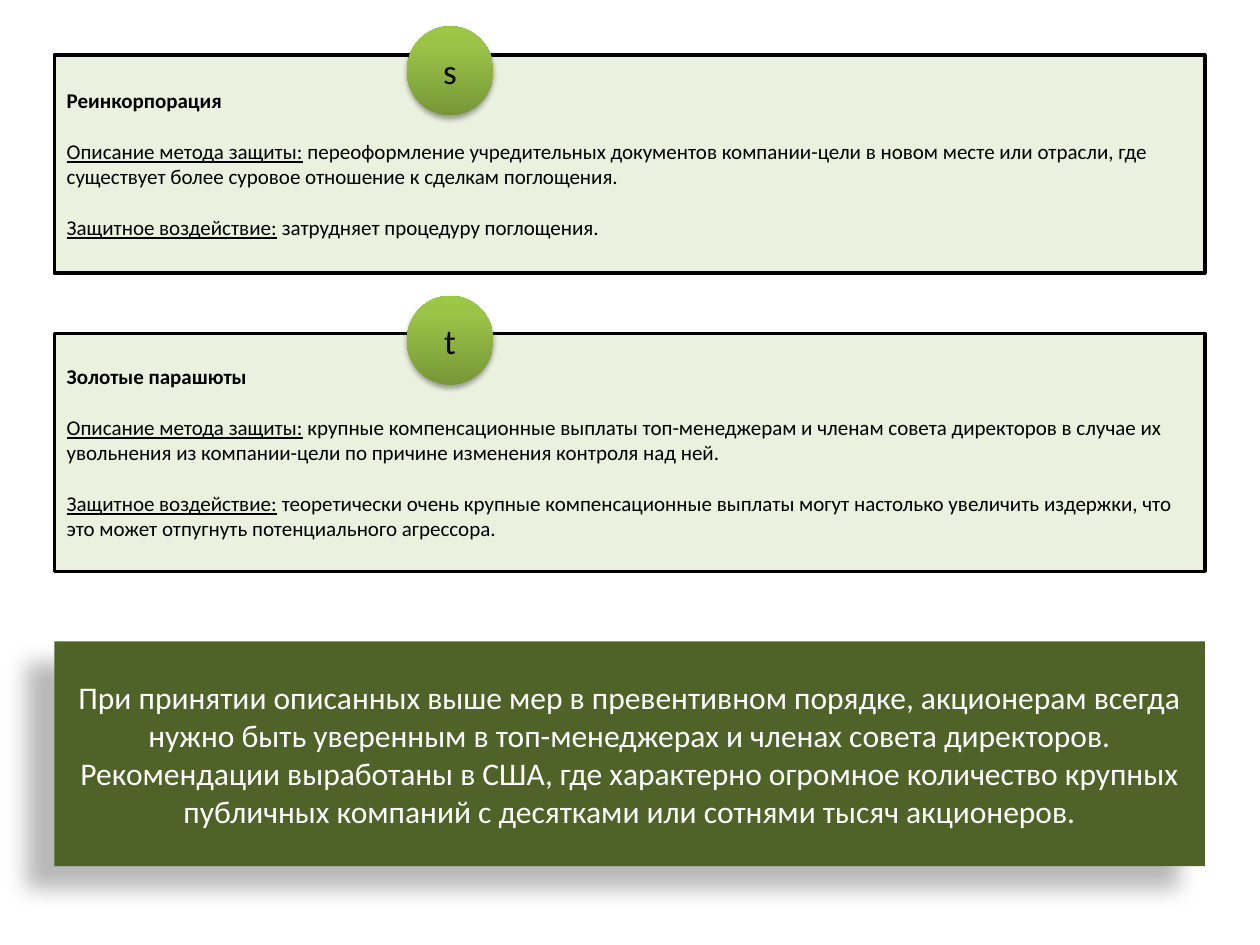
from copy import deepcopy

from lxml import etree
from pptx import Presentation
from pptx.dml.color import RGBColor
from pptx.enum.shapes import MSO_SHAPE
from pptx.enum.text import MSO_ANCHOR, PP_ALIGN
from pptx.oxml.ns import qn
from pptx.util import Pt

RECT, OVAL = MSO_SHAPE.RECTANGLE, MSO_SHAPE.OVAL
LEFT, CENTER = PP_ALIGN.LEFT, PP_ALIGN.CENTER
MIDDLE = MSO_ANCHOR.MIDDLE

DESCRIPTION = "Описание метода защиты:"
EFFECT = "Защитное воздействие:"
METHODS = [
    dict(letter="s", top=31.5, height=124.5, badge_top=15, title="Реинкорпорация",
         description="переоформление учредительных документов компании-цели в новом месте "
                     "или отрасли, где существует более суровое отношение к сделкам поглощения.",
         effect="затрудняет процедуру поглощения."),
    dict(letter="t", top=190.5, height=136, badge_top=169, title="Золотые парашюты",
         description="крупные компенсационные выплаты топ-менеджерам и членам совета директоров "
                     "в случае их увольнения из компании-цели по причине изменения контроля над ней.",
         effect="теоретически очень крупные компенсационные выплаты могут настолько увеличить "
                "издержки, что это может отпугнуть потенциального агрессора."),
]
CONCLUSION = [
    "При принятии описанных выше мер в превентивном порядке, акционерам всегда нужно быть "
    "уверенным в топ-менеджерах и членах совета директоров.",
    "Рекомендации выработаны в США, где характерно огромное количество крупных публичных "
    "компаний с десятками или сотнями тысяч акционеров.",
]

BOX_LEFT, BOX_WIDTH = 31, 657.5
BADGE_LEFT, BADGE_WIDTH, BADGE_HEIGHT = 232.5, 49.5, 51
CONCLUSION_TOP, CONCLUSION_HEIGHT = 366.5, 128.5
PARAGRAPH_GAP = 14.65
BADGE_STOPS = [(0, "779737"), (0.8, "9BC348"), (1, "9DC746")]


def rgb(color):
    return RGBColor.from_string(color)


def add_box(kind, left, top, width, height, fill=None, line=None):
    sp = slide.shapes.add_shape(kind, Pt(left), Pt(top), Pt(width), Pt(height))
    sp.shadow.inherit = False
    if fill:
        sp.fill.solid()
        sp.fill.fore_color.rgb = rgb(fill)
    if line:
        sp.line.color.rgb = rgb(line)
        sp.line.width = Pt(2)
    else:
        sp.line.fill.background()
    sp.text_frame.word_wrap = True
    sp.text_frame.vertical_anchor = MIDDLE
    return sp


def add_text(sp, paragraphs, size, color="000000", align=LEFT, gap=0):
    """Each paragraph is a list of (text, font attributes) runs."""
    tf = sp.text_frame
    for i, runs in enumerate(paragraphs):
        p = tf.add_paragraph() if i else tf.paragraphs[0]
        p.alignment = align
        if i and gap:
            p.space_before = Pt(gap)
        for text, style in runs:
            r = p.add_run()
            r.text = text
            r.font.name = "Calibri"
            r.font.size = Pt(size)
            r.font.color.rgb = rgb(color)
            for name, value in style.items():
                setattr(r.font, name, value)


def add_shadow(sp, opacity, blur, distance, angle):
    effects = sp._element.spPr.find(qn("a:effectLst"))
    shadow = etree.SubElement(effects, qn("a:outerShdw"), blurRad=str(Pt(blur)),
                              dist=str(Pt(distance)), dir=str(angle * 60000),
                              rotWithShape="0")
    color = etree.SubElement(shadow, qn("a:srgbClr"), val="000000")
    etree.SubElement(color, qn("a:alpha"), val=str(opacity * 1000))


def fill_gradient(sp, stops):
    sp.fill.gradient()
    sp.fill.gradient_angle = 90
    gs_list = sp._element.spPr.find(".//" + qn("a:gsLst"))
    while len(gs_list) < len(stops):
        gs_list.append(deepcopy(gs_list[0]))
    for stop, (position, color) in zip(sp.fill.gradient_stops, stops):
        stop.position = position
        stop.color.rgb = rgb(color)


prs = Presentation()
prs.slide_width, prs.slide_height = Pt(720), Pt(540)
slide = prs.slides.add_slide(prs.slide_layouts[6])

for method in METHODS:
    sp = add_box(RECT, BOX_LEFT, method["top"], BOX_WIDTH, method["height"],
                 fill="EBF1DE", line="000000")
    add_text(sp, [
        [(method["title"], {"bold": True})],
        [(DESCRIPTION, {"underline": True}), (" " + method["description"], {})],
        [(EFFECT, {"underline": True}), (" " + method["effect"], {})],
    ], size=12, gap=PARAGRAPH_GAP)

for method in METHODS:
    sp = add_box(OVAL, BADGE_LEFT, method["badge_top"], BADGE_WIDTH, BADGE_HEIGHT)
    fill_gradient(sp, BADGE_STOPS)
    add_shadow(sp, opacity=35, blur=3.1, distance=1.8, angle=90)
    add_text(sp, [[(method["letter"], {})]], size=20, align=CENTER)

sp = add_box(RECT, BOX_LEFT, CONCLUSION_TOP, BOX_WIDTH, CONCLUSION_HEIGHT, fill="4F6228")
add_shadow(sp, opacity=28, blur=11.8, distance=19.7, angle=141)
add_text(sp, [[(text, {})] for text in CONCLUSION], size=18, color="FFFFFF", align=CENTER)

prs.save("out.pptx")
